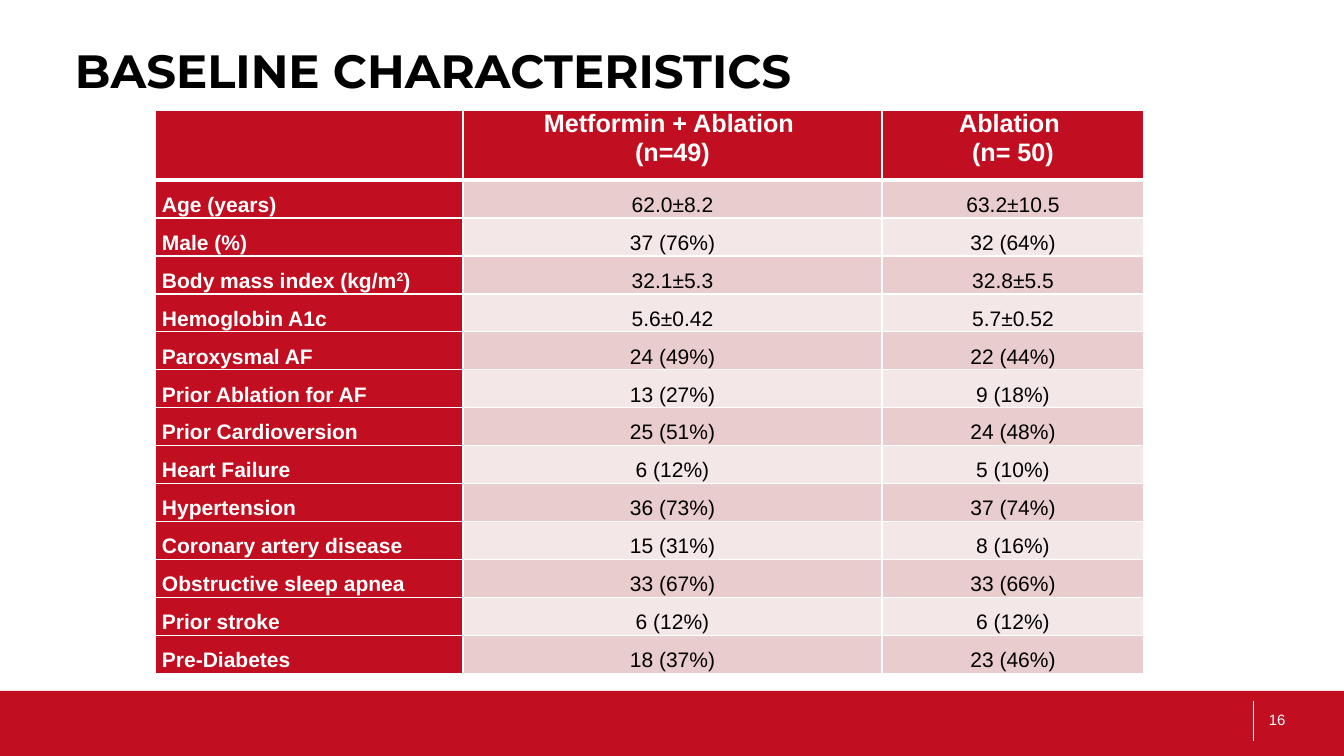
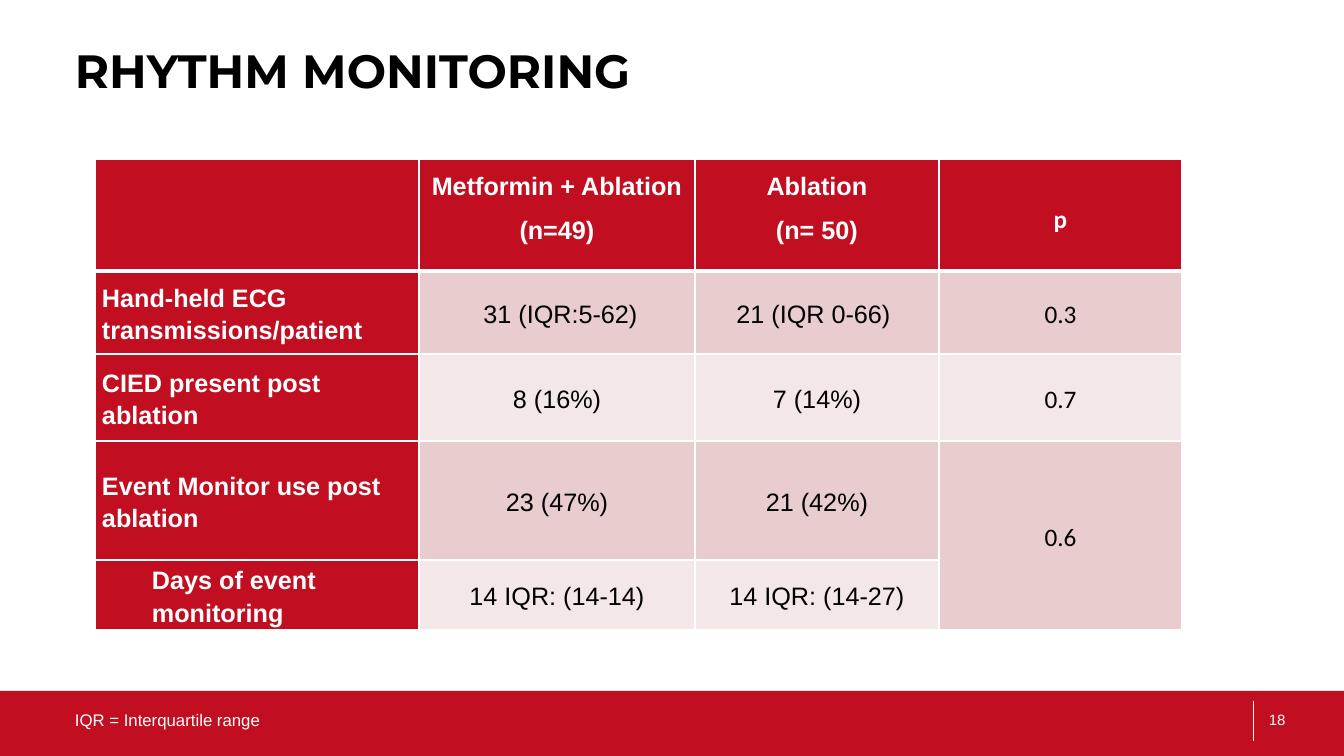
"""Build two trial-result slides, each with a title, a results table and a footer band."""
from lxml.etree import SubElement
from pptx import Presentation
from pptx.dml.color import RGBColor
from pptx.enum.shapes import MSO_CONNECTOR, MSO_SHAPE
from pptx.enum.text import MSO_ANCHOR as ANCHOR, PP_ALIGN as ALIGN
from pptx.oxml.ns import qn
from pptx.util import Emu, Pt

RED = RGBColor(0xC1, 0x0E, 0x20)
ROSE = RGBColor(0xE9, 0xCC, 0xCD)
BLUSH = RGBColor(0xF4, 0xE7, 0xE8)
WHITE = RGBColor(0xFF, 0xFF, 0xFF)
BLACK = RGBColor(0, 0, 0)

SLIDE_W, SLIDE_H = 1344, 756
EMU_PER_PX = 914400 * 10 / 1008
BAND_TOP, FOOT_TOP, FOOT_H, RULE_X = 691, 700, 40, 1253
HEAD_SIZE = 18

SLIDES = [
    {
        "title": "BASELINE CHARACTERISTICS",
        "number": "16",
        "note": None,
        "at": (155, 110),
        "cols": [308, 419, 262],
        "rows": [70] + [38] * 13,
        "size": 15,
        "head_spacing": [1.0, 1.0],
        "spacing": 1.5,
        "after": 0,
        "head": ["", "Metformin + Ablation \n(n=49)", "Ablation \n(n= 50)"],
        "body": [
            ("Age (years)", "62.0±8.2", "63.2±10.5"),
            ("Male (%)", "37 (76%)", "32 (64%)"),
            ("Body mass index (kg/m^2^)", "32.1±5.3", "32.8±5.5"),
            ("Hemoglobin A1c", "5.6±0.42", "5.7±0.52"),
            ("Paroxysmal AF", "24 (49%)", "22 (44%)"),
            ("Prior Ablation for AF", "13 (27%)", "9 (18%)"),
            ("Prior Cardioversion", "25 (51%)", "24 (48%)"),
            ("Heart Failure", "6 (12%)", "5 (10%)"),
            ("Hypertension", "36 (73%)", "37 (74%)"),
            ("Coronary artery disease", "15 (31%)", "8 (16%)"),
            ("Obstructive sleep apnea", "33 (67%)", "33 (66%)"),
            ("Prior stroke", "6 (12%)", "6 (12%)"),
            ("Pre-Diabetes", "18 (37%)", "23 (46%)"),
        ],
    },
    {
        "title": "RHYTHM MONITORING",
        "number": "18",
        "note": "IQR = Interquartile range",
        "at": (95, 159),
        "cols": [324, 276, 244, 243],
        "rows": [112, 83, 87, 119, 70],
        "size": 18,
        "head_spacing": [1.5, 1.15],
        "spacing": 1.15,
        "after": 8,
        "head": ["", "Metformin + Ablation\n(n=49)", "Ablation\n(n= 50)", "p"],
        "body": [
            ("Hand-held ECG transmissions/patient", " 31 (IQR:5-62)", "21 (IQR 0-66) ", "0.3"),
            ("CIED present post ablation", "8 (16%)", "7 (14%)", "0.7"),
            ("Event Monitor use post ablation", "23 (47%)", "21 (42%)", "0.6"),
            ("Days of event monitoring", "14 IQR: (14-14)", "14 IQR: (14-27)", None),
        ],
        "p_column": 3,
        "p_drop": 41,
        "indents": {4: 50},
    },
]


def px(n):
    return Emu(round(n * EMU_PER_PX))


def apply(obj, values):
    for name, value in values.items():
        setattr(obj, name, value)


def font_values(size, color, bold=False, name="Arial"):
    return {"size": Pt(size), "bold": bold, "name": name}, color


def add_runs(p, text, style):
    values, color = style
    for i, part in enumerate(text.split("^")):
        r = p.add_run()
        r.text = part
        apply(r.font, values)
        r.font.color.rgb = color
        if i % 2:
            r.font._element.set("baseline", "30000") if hasattr(r.font, "_element") else \
                r._r.get_or_add_rPr().set("baseline", "30000")


def add_text(s, box, text, style, anchor=ANCHOR.TOP):
    tf = s.shapes.add_textbox(*map(px, box)).text_frame
    apply(tf, {"word_wrap": True, "vertical_anchor": anchor})
    add_runs(tf.paragraphs[0], text, style)


def add_frame(s, data):
    band = s.shapes.add_shape(MSO_SHAPE.RECTANGLE, 0, px(BAND_TOP), px(SLIDE_W), px(SLIDE_H - BAND_TOP))
    band.shadow.inherit = False
    band.fill.solid()
    band.fill.fore_color.rgb = RED
    band.line.fill.background()
    rule = s.shapes.add_connector(
        MSO_CONNECTOR.STRAIGHT, *map(px, (RULE_X, FOOT_TOP + 1, RULE_X, FOOT_TOP + FOOT_H + 1)))
    rule.line.color.rgb = WHITE
    rule.line.width = Pt(0.5)
    SubElement(rule._element.spPr, qn("a:effectLst"))
    add_text(s, (65, 37, 1011, 143), data["title"], font_values(33.3, BLACK, True, "Montserrat"))
    add_text(s, (1259, FOOT_TOP, 85, FOOT_H), data["number"], font_values(10.7, WHITE), ANCHOR.MIDDLE)
    if data["note"]:
        add_text(s, (65, FOOT_TOP, 1130, FOOT_H), data["note"], font_values(12, WHITE), ANCHOR.MIDDLE)


def set_borders(cell, row):
    tcPr = cell._tc.get_or_add_tcPr()
    widths = {"L": 1, "R": 1, "T": 3 if row == 1 else 1, "B": 3 if row == 0 else 1}
    for side, width in widths.items():
        ln = SubElement(tcPr, qn(f"a:ln{side}"), w=str(Pt(width)))
        SubElement(SubElement(ln, qn("a:solidFill")), qn("a:srgbClr"), val=str(WHITE))


def fill_cell(cell, row, col, text, data):
    is_head, is_label = row == 0, col == 0
    is_p = col == data.get("p_column")
    set_borders(cell, row)
    cell.fill.solid()
    cell.fill.fore_color.rgb = RED if is_head or is_label else ROSE if row % 2 else BLUSH
    apply(cell, {
        "margin_left": px(7), "margin_right": px(7), "margin_bottom": 0,
        "margin_top": px(data["p_drop"]) if is_head and is_p else 0,
        "vertical_anchor": ANCHOR.TOP if is_head else ANCHOR.MIDDLE,
    })
    if not text:
        return
    strong = is_head or is_label
    style = font_values(HEAD_SIZE if is_head else data["size"], WHITE if strong else BLACK,
                        strong, "Calibri" if is_p else "Arial")
    tf = cell.text_frame
    for i, line in enumerate(text.split("\n")):
        p = tf.paragraphs[0] if i == 0 else tf.add_paragraph()
        apply(p, {
            "alignment": ALIGN.LEFT if is_label else ALIGN.CENTER,
            "line_spacing": data["head_spacing"][i] if is_head and not is_p else data["spacing"],
            "space_after": Pt(data["after"]),
        })
        if is_label and row in data.get("indents", {}):
            p._p.get_or_add_pPr().set("marL", str(px(data["indents"][row])))
        add_runs(p, line, style)


def add_results(s, data):
    rows, cols = data["rows"], data["cols"]
    box = (*data["at"], sum(cols), sum(rows))
    table = s.shapes.add_table(len(rows), len(cols), *map(px, box)).table
    table.horz_banding = False
    for column, width in zip(table.columns, cols):
        column.width = px(width)
    for row, height in zip(table.rows, rows):
        row.height = px(height)
    for i, texts in enumerate([data["head"], *data["body"]]):
        for j, text in enumerate(texts):
            fill_cell(table.cell(i, j), i, j, text, data)
            if text is None:
                table.cell(i - 1, j).merge(table.cell(i, j))


def main():
    prs = Presentation()
    apply(prs, {"slide_width": px(SLIDE_W), "slide_height": px(SLIDE_H)})
    for data in SLIDES:
        s = prs.slides.add_slide(prs.slide_layouts[6])
        add_frame(s, data)
        add_results(s, data)
    prs.save("out.pptx")


if __name__ == "__main__":
    main()
